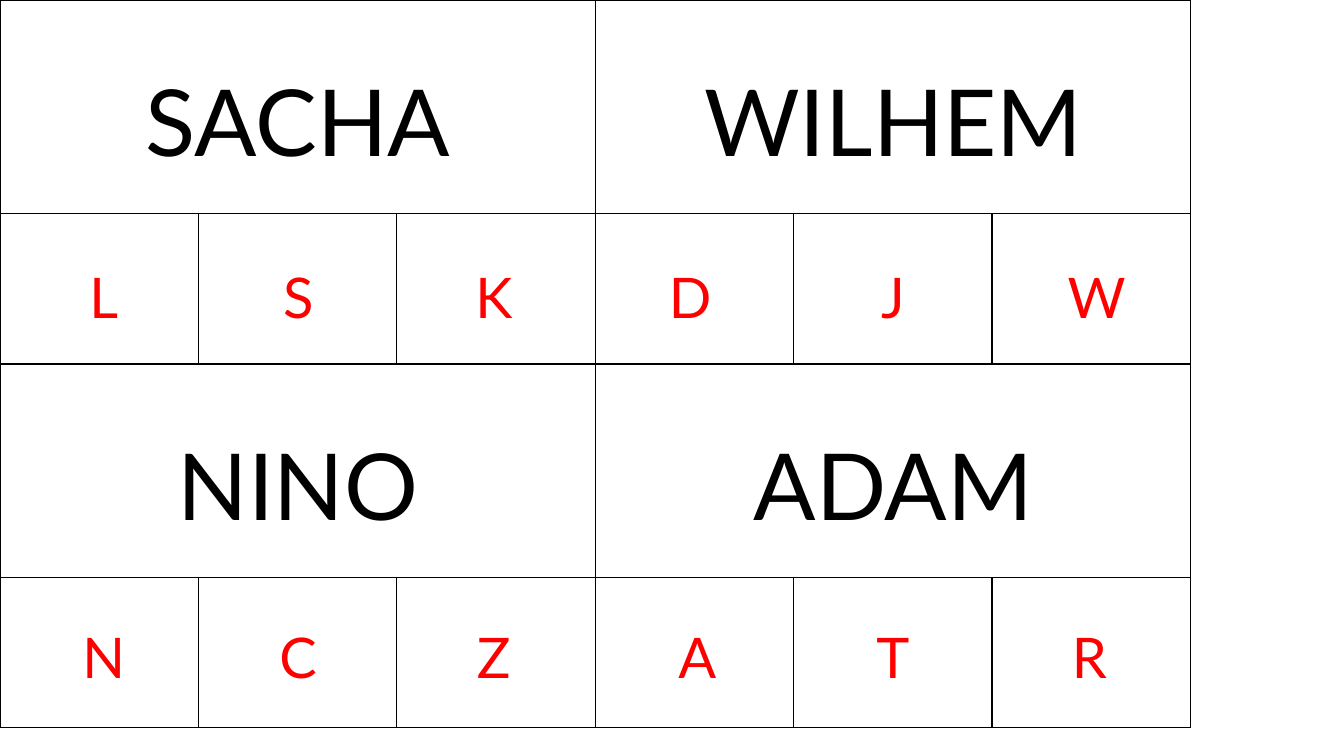
from lxml.etree import SubElement as Sub
from pptx import Presentation
from pptx.dml.color import RGBColor
from pptx.enum.text import MSO_AUTO_SIZE as Fit, PP_ALIGN as Align
from pptx.oxml.ns import qn
from pptx.util import Cm, Pt

BLACK = RGBColor(0, 0, 0)
RED = RGBColor(255, 0, 0)
FONT = "Lato"
COL, TOP_ROW, LOW_ROW = 5, 5.39, 3.78
CARD_W, CARD_H = 3 * COL, TOP_ROW + LOW_ROW

# Left and width of the name boxes in each column of cards
NAME_BOXES = [(2.95, 9.12), (16.59, 11.86)]
# Top of the name, top of the letters, names, letters with their left edges
ROWS = [
    (1.5, 6.5, ["SACHA", "WILHEM"],
     [("L", 0.94), ("S", 5.84), ("K", 10.77),
      ("D", 15.72), ("J", 20.83), ("W", 25.96)]),
    (10.67, 15.57, ["NINO", "ADAM"],
     [("N", 0.94), ("C", 5.84), ("Z", 10.77),
      ("A", 15.9), ("T", 20.83), ("R", 25.78)]),
]


def add_text(slide, text, left, top, width, height, size=40, color=RED):
    box = slide.shapes.add_textbox(Cm(left), Cm(top), Cm(width), Cm(height))
    frame = box.text_frame
    frame.word_wrap = True
    frame.auto_size = Fit.SHAPE_TO_FIT_TEXT
    para = frame.paragraphs[0]
    para.alignment = Align.CENTER
    run = para.add_run()
    run.text = text
    run.font.name = FONT
    run.font.size = Pt(size)
    run.font.color.rgb = color


def style_cell(cell):
    """Give the cell black borders and no fill."""
    props = cell._tc.get_or_add_tcPr()
    for side in ("lnL", "lnR", "lnT", "lnB"):
        line = Sub(props, qn(f"a:{side}"), w=str(Pt(1)))
        fill = Sub(line, qn("a:solidFill"))
        Sub(fill, qn("a:srgbClr"), val=str(BLACK))
    cell.fill.background()


def add_card(slide, left, top):
    """Add a table with one wide cell above three small ones."""
    frame = slide.shapes.add_table(
        2, 3, Cm(left), Cm(top), Cm(CARD_W), Cm(CARD_H))
    table = frame.table
    table.first_row = table.horz_banding = False
    for col in table.columns:
        col.width = Cm(COL)
    for row, height in zip(table.rows, (TOP_ROW, LOW_ROW)):
        row.height = Cm(height)
    table.cell(0, 0).merge(table.cell(0, 2))
    for cell in table.iter_cells():
        style_cell(cell)


def main():
    deck = Presentation()
    deck.slide_width, deck.slide_height = Cm(33.87), Cm(19.05)
    slide = deck.slides.add_slide(deck.slide_layouts[6])
    for row in range(2):
        for col in range(2):
            add_card(slide, col * CARD_W, row * CARD_H)
    for name_top, low_top, names, letters in ROWS:
        for name, (left, width) in zip(names, NAME_BOXES):
            add_text(slide, name, left, name_top, width, 3.07,
                     size=66, color=BLACK)
        for letter, left in letters:
            add_text(slide, letter, left, low_top, 3.35, 1.96)
    deck.save("out.pptx")


if __name__ == "__main__":
    main()
